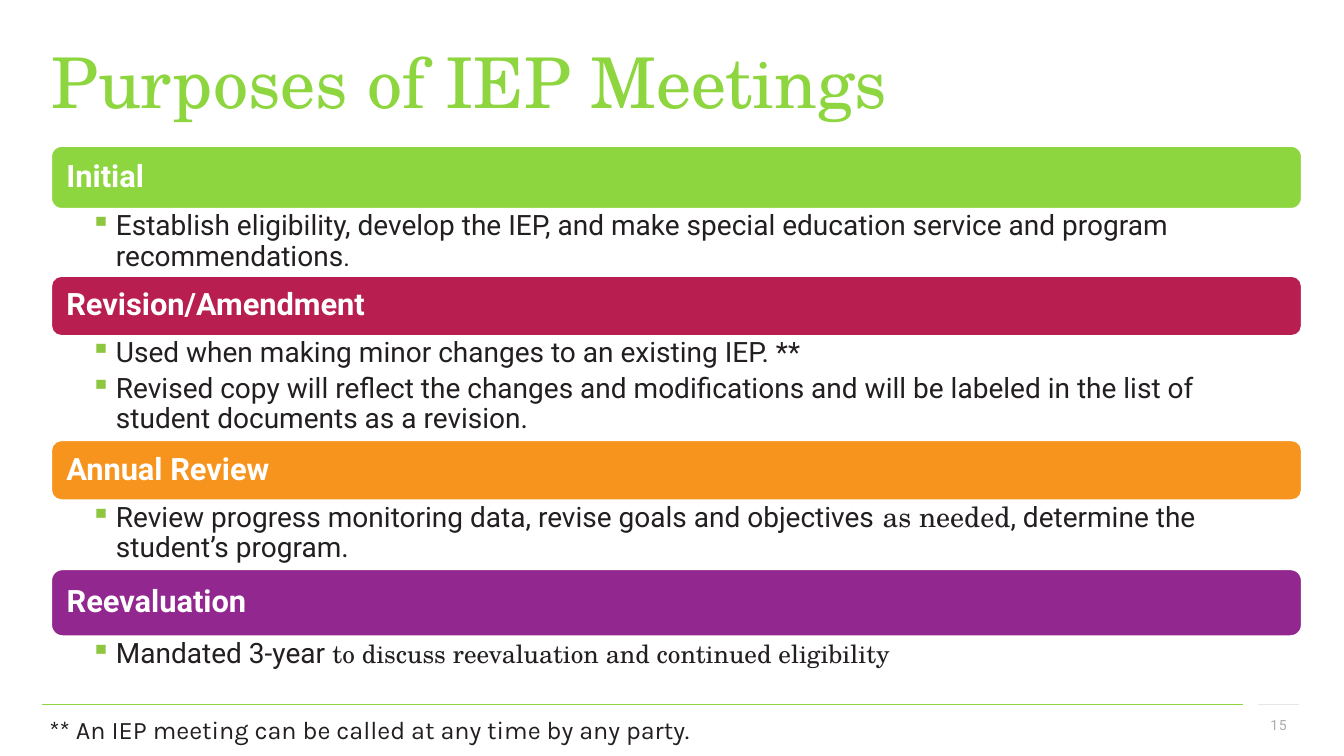
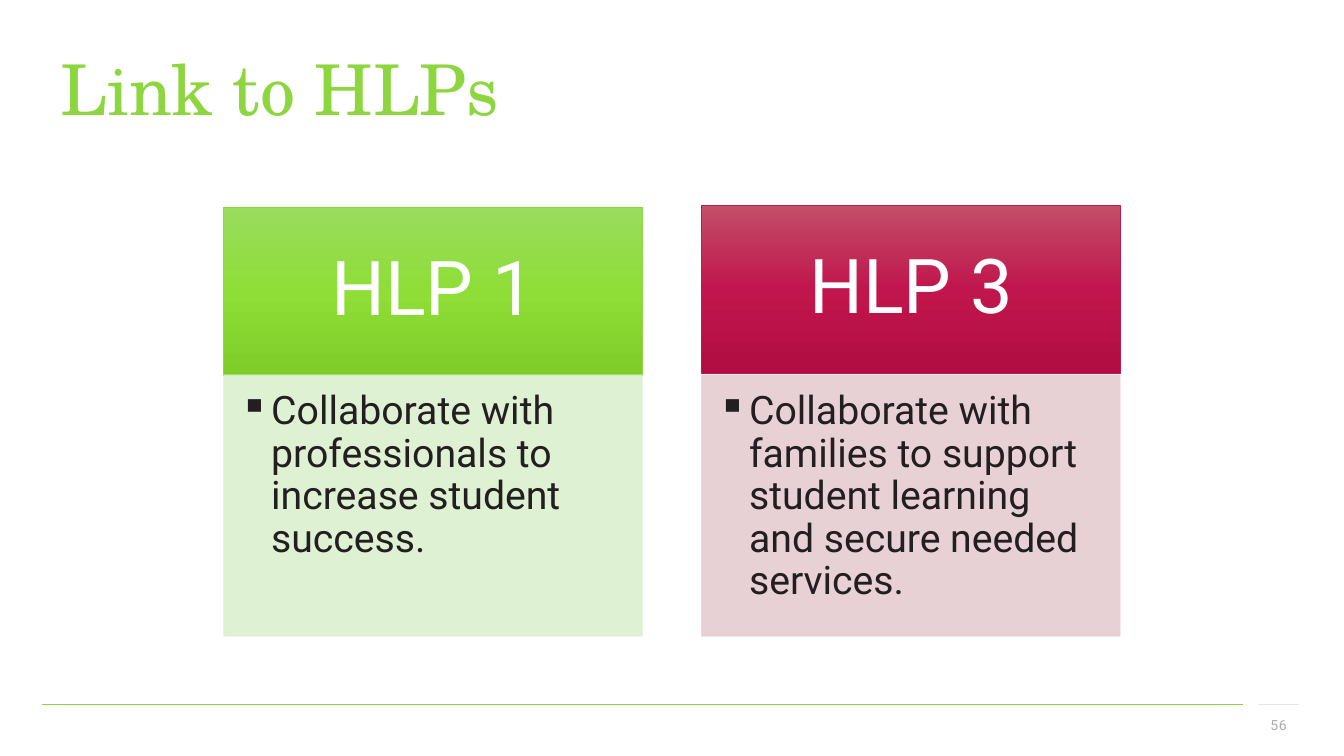
"""Build two slides on IEP meetings: their purposes and the linked HLPs."""
from dataclasses import dataclass

from lxml.etree import SubElement
from pptx import Presentation
from pptx.dml.color import RGBColor
from pptx.enum.shapes import MSO_CONNECTOR, MSO_SHAPE
from pptx.enum.text import MSO_ANCHOR as Anchor, PP_ALIGN as Align
from pptx.oxml.ns import qn
from pptx.util import Inches, Pt


@dataclass(frozen=True)
class Theme:
    green: str = "8ED63F"
    crimson: str = "B81E50"
    orange: str = "F7941D"
    purple: str = "92278F"
    bullet: str = "8EC63F"
    ink: str = "231F20"
    white: str = "FFFFFF"
    rule: str = "E7E6E6"
    muted: str = "AFABAB"
    serif: str = "TeX Gyre Schola"
    sans: str = "Roboto"
    note: str = "Karla"
    title_size: int = 50
    card_size: int = 54
    card_body_size: int = 28
    bar_size: int = 22
    body_size: int = 20
    small_size: int = 18
    number_size: int = 10


theme = Theme()


def write(box, paragraphs, size, color, font=theme.sans, bold=False, align=Align.LEFT,
          anchor=Anchor.TOP, insets=(0.1, 0.05, 0.1, 0.05), spacing=1.0, after=0,
          indent=0, bullet_color=None):
    """Fill a box with paragraphs, each a list of (text, size, font) spans."""
    frame = box.text_frame
    frame.word_wrap = True
    frame.vertical_anchor = anchor
    frame.margin_left, frame.margin_top, frame.margin_right, frame.margin_bottom = map(Inches, insets)
    for index, spans in enumerate(paragraphs):
        para = frame.add_paragraph() if index else frame.paragraphs[0]
        if indent:
            properties = para._p.get_or_add_pPr()
            properties.set("marL", str(Inches(indent)))
            properties.set("indent", str(-Inches(indent)))
            bullet = SubElement(properties, qn("a:buClr"))
            SubElement(bullet, qn("a:srgbClr"), val=bullet_color or color)
            SubElement(properties, qn("a:buChar"), char="▪")
        para.alignment = align
        para.line_spacing = spacing
        para.space_after = Pt(after)
        para.font.size = Pt(size)
        para.font.name = font
        para.font.bold = bold
        para.font.color.rgb = RGBColor.from_string(color)
        for text, span_size, span_font in spans:
            span = para.add_run()
            span.text = text
            if span_size:
                span.font.size = Pt(span_size)
            if span_font:
                span.font.name = span_font


def add_panel(page, kind, at, fill, line, line_width):
    """Add a flat shape with a solid fill and an outline."""
    panel = page.shapes.add_shape(kind, *map(Inches, at))
    panel.shadow.inherit = False
    panel.fill.solid()
    panel.fill.fore_color.rgb = RGBColor.from_string(fill)
    panel.line.color.rgb = RGBColor.from_string(line)
    panel.line.width = Pt(line_width)
    return panel


deck = Presentation()
deck.slide_width = Inches(13.33)
deck.slide_height = Inches(7.5)

titles = [
    ("Purposes of IEP Meetings", "15", (0.51, 0.31, 9.69, 0.97),
     dict(anchor=Anchor.MIDDLE, insets=(0, 0, 0, 0))),
    ("Link to HLPs", "56", (0.5, 0.5, 12.5, 1.35), dict(spacing=0.9)),
]
footer_rules = [(0.42, 12.33, theme.green), (12.48, 12.88, theme.rule)]
footer_top = 6.99

for title, number, at, style in titles:
    page = deck.slides.add_slide(deck.slide_layouts[6])
    for start, end, color in footer_rules:
        rule = page.shapes.add_connector(
            MSO_CONNECTOR.STRAIGHT, Inches(start), Inches(footer_top), Inches(end), Inches(footer_top))
        rule.line.color.rgb = RGBColor.from_string(color)
        rule.line.width = Pt(1)
        SubElement(rule._element.spPr, qn("a:effectLst"))
    title_box = page.shapes.add_textbox(*map(Inches, at))
    write(title_box, [[(title, None, None)]], theme.title_size, theme.green, theme.serif, **style)
    number_box = page.shapes.add_textbox(*map(Inches, (12.44, footer_top, 0.42, 0.4)))
    write(number_box, [[(number, None, None)]], theme.number_size, theme.muted,
          align=Align.RIGHT, anchor=Anchor.MIDDLE)
    number_box.text_frame.paragraphs[0].runs[0]._r.get_or_add_rPr().set("spc", "50")

purposes_page, links_page = deck.slides

purposes = [
    ("Initial", theme.green, 1.45, 0.62, [
        [("Establish eligibility, develop the IEP, and make special education service "
          "and program recommendations", None, None), (".", theme.small_size, None)]]),
    ("Revision/Amendment", theme.crimson, 2.74, 0.59, [
        [("Used when making minor changes to an existing IEP. **", None, None)],
        [("Revised copy will reflect the changes and modifications and will be labeled "
          "in the list of student documents as a revision.", None, None)]]),
    ("Annual Review", theme.orange, 4.37, 0.59, [
        [("Review progress monitoring data, revise goals and objectives", None, None),
         (" as needed", None, theme.serif),
         (", determine the student’s program.", None, None)]]),
    ("Reevaluation", theme.purple, 5.65, 0.66, [
        [("Mandated 3-year ", None, None),
         ("to discuss reevaluation and continued eligibility", theme.small_size, theme.serif)]]),
]
list_left, list_width, list_bottom = 0.51, 12.4, 6.88
bottoms = [purpose[2] for purpose in purposes[1:]] + [list_bottom]

for (heading, color, top, bar_height, details), bottom in zip(purposes, bottoms):
    bar = add_panel(purposes_page, MSO_SHAPE.ROUNDED_RECTANGLE,
                    (list_left, top, list_width, bar_height), color, theme.white, 1)
    write(bar, [[(heading, None, None)]], theme.bar_size, theme.white, bold=True,
          anchor=Anchor.MIDDLE, insets=(0.12, 0.09, 0.12, 0.09), spacing=0.9)
    body_top = top + bar_height
    body = purposes_page.shapes.add_textbox(
        *map(Inches, (list_left, body_top, list_width, bottom - body_top)))
    write(body, details, theme.body_size, theme.ink, insets=(0.39, 0.03, 0.16, 0.03),
          spacing=0.9, after=4, indent=0.25, bullet_color=theme.bullet)

footnote = purposes_page.shapes.add_textbox(*map(Inches, (0.39, 7.04, 7.38, 0.4)))
write(footnote, [[("** An IEP meeting can be called at any time by any party.", None, None)]],
      theme.small_size, theme.ink, theme.note)

cards = [
    ("HLP 1", 2.06, theme.green, ("9ADC5E", "8EDE37", "7FCD29"), "DBF0CF",
     "Collaborate with professionals to increase student success."),
    ("HLP 3", 2.04, theme.crimson, ("C34E68", "C0164D", "B10D42"), "E6CDD0",
     "Collaborate with families to support student learning and secure needed services."),
]
card_left, card_width, card_step = 2.22, 4.15, 4.74

for index, (heading, top, color, shades, tint, detail) in enumerate(cards):
    left = card_left + index * card_step
    header = add_panel(links_page, MSO_SHAPE.RECTANGLE, (left, top, card_width, 1.66), color, color, 0.5)
    header.fill.gradient()
    header.fill.gradient_angle = 270
    stops = header._element.spPr.find(".//" + qn("a:gsLst"))
    for stop in list(stops):
        stops.remove(stop)
    for position, shade in zip((0, 50000, 100000), shades):
        stop = SubElement(stops, qn("a:gs"), pos=str(position))
        SubElement(stop, qn("a:srgbClr"), val=shade)
    write(header, [[(heading, None, None)]], theme.card_size, theme.white, align=Align.CENTER,
          anchor=Anchor.MIDDLE, insets=(0.42, 0.24, 0.42, 0.24), spacing=0.9)

    body = add_panel(links_page, MSO_SHAPE.RECTANGLE, (left, 3.72, card_width, 2.59), tint, tint, 0.5)
    for tint_color in body._element.spPr.iter(qn("a:srgbClr")):
        SubElement(tint_color, qn("a:alpha"), val="90000")
    write(body, [[(detail, None, None)]], theme.card_body_size, theme.ink,
          insets=(0.16, 0.16, 0.22, 0.24), spacing=0.9, after=4, indent=0.31)

deck.save("out.pptx")
